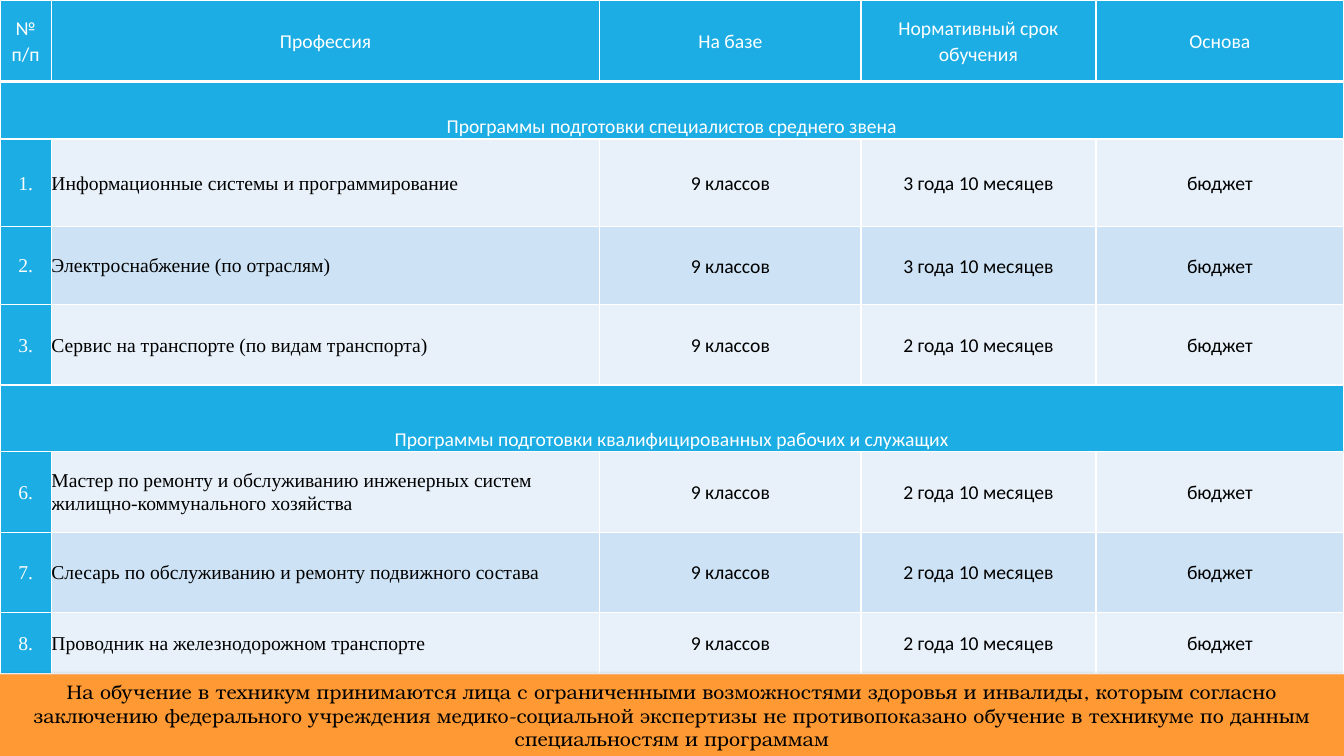
import dataclasses

import pptx
import pptx.dml.color
import pptx.enum.shapes
import pptx.enum.text
import pptx.oxml
import pptx.oxml.ns
import pptx.util

PX = 9144  # EMU in one px, 100 px to the inch
WIDE, HIGH = 1333, 750
HEX = {
    "blue": "1CADE4",
    "light": "E8F1FA",
    "mid": "CDE3F5",
    "orange": "FF9933",
    "white": "FFFFFF",
    "black": "000000",
}
SANS, SERIF, BOOK = "Calibri", "Times New Roman", "TeX Gyre Bonum"
SIZE = pptx.util.Pt(14)
ALIGN = pptx.enum.text.PP_ALIGN
ANCHOR = pptx.enum.text.MSO_ANCHOR


@dataclasses.dataclass(frozen=True)
class Look:
    fill: str
    ink: str
    font: str = SANS
    align: ALIGN = ALIGN.CENTER
    anchor: ANCHOR = ANCHOR.MIDDLE
    base: int = 1  # bottom border, pt


@dataclasses.dataclass(frozen=True)
class Row:
    high: int
    texts: tuple[str, ...]  # a single text spans the whole row
    band: str = "blue"


def course(high: int, num: str, name: str, term: str, band: str = "light") -> Row:
    return Row(high, (num, name, "9 классов", term, "бюджет"), band)


LONG, SHORT = "3 года 10 месяцев", "2 года 10 месяцев"
COLS = (51, 544, 259, 233, 246)
ROWS = (
    Row(81, ("№ п/п", "Профессия", "На базе", "Нормативный срок обучения", "Основа")),
    Row(57, ("Программы подготовки специалистов среднего звена",)),
    course(87, "1.", "Информационные системы и программирование", LONG),
    course(77, "2.", "Электроснабжение (по отраслям)", LONG, "mid"),
    course(80, "3.", "Сервис на транспорте (по видам транспорта)", SHORT),
    Row(66, ("Программы подготовки квалифицированных рабочих и служащих",)),
    course(80, "6.", "Мастер по ремонту и обслуживанию инженерных систем "
           "жилищно-коммунального хозяйства", SHORT),
    course(80, "7.", "Слесарь по обслуживанию и ремонту подвижного состава", SHORT, "mid"),
    course(60, "8.", "Проводник на железнодорожном транспорте", SHORT),
)
NOTE = (
    "На обучение в техникум принимаются лица с ограниченными возможностями здоровья "
    "и инвалиды, которым согласно заключению федерального учреждения медико-социальной "
    "экспертизы не противопоказано обучение в техникуме по данным специальностям и программам"
)
NOTE_TOP = 669


def rgb(name: str) -> pptx.dml.color.RGBColor:
    return pptx.dml.color.RGBColor.from_string(HEX[name])


def paint(shape, name: str) -> None:
    shape.fill.solid()
    shape.fill.fore_color.rgb = rgb(name)


def write(frame, text: str, font: str, ink: str, align: ALIGN):
    frame.text = text
    para = frame.paragraphs[0]
    para.alignment = align
    para.font.size = SIZE
    para.font.name = font
    para.font.color.rgb = rgb(ink)
    return para


def edge(cell, base: int) -> None:
    props = cell._tc.get_or_add_tcPr()
    for side, points in (("L", 1), ("R", 1), ("T", 1), ("B", base)):
        props.append(pptx.oxml.parse_xml(
            f'<a:ln{side} {pptx.oxml.ns.nsdecls("a")} w="{pptx.util.Pt(points)}">'
            f'<a:solidFill><a:srgbClr val="{HEX["white"]}"/></a:solidFill></a:ln{side}>'
        ))


def style(cell, look: Look) -> None:
    edge(cell, look.base)
    paint(cell, look.fill)
    cell.vertical_anchor = look.anchor
    cell.margin_left = cell.margin_right = cell.margin_top = cell.margin_bottom = 0


def choose(row: Row, col: int) -> Look:
    if len(row.texts) == 1:
        return Look("blue", "white", anchor=ANCHOR.BOTTOM)
    if row.band == "blue":
        return Look("blue", "white", base=3)
    if col == 0:
        return Look("blue", "white", SERIF)
    if col == 1:
        return Look(row.band, "black", SERIF, ALIGN.LEFT)
    return Look(row.band, "black")


def draw_table(slide) -> None:
    high = sum(row.high for row in ROWS)
    table = slide.shapes.add_table(len(ROWS), len(COLS), 0, 0, WIDE * PX, high * PX).table
    table.first_row = table.horz_banding = False
    for col, wide in enumerate(COLS):
        table.columns[col].width = wide * PX
    for num, row in enumerate(ROWS):
        table.rows[num].height = row.high * PX
        for col in range(len(COLS)):
            style(table.cell(num, col), choose(row, col))
        if len(row.texts) == 1:
            table.cell(num, 0).merge(table.cell(num, len(COLS) - 1))
        for col, text in enumerate(row.texts):
            look = choose(row, col)
            frame = table.cell(num, col).text_frame
            para = write(frame, text, look.font, look.ink, look.align)
            para.line_spacing = 1.07
            para.space_after = pptx.util.Pt(8)


def draw_note(slide) -> None:
    rect = pptx.enum.shapes.MSO_SHAPE.RECTANGLE
    note = slide.shapes.add_shape(
        rect, 0, NOTE_TOP * PX, WIDE * PX, (HIGH - NOTE_TOP) * PX
    )
    paint(note, "orange")
    note.line.fill.background()
    frame = note.text_frame
    frame.word_wrap = True
    frame.auto_size = pptx.enum.text.MSO_AUTO_SIZE.SHAPE_TO_FIT_TEXT
    write(frame, NOTE, BOOK, "black", ALIGN.CENTER)
    # Soft shadow below the band
    note.shadow.inherit = False
    glow = note._element.spPr.find(pptx.oxml.ns.qn("a:effectLst"))
    glow.append(pptx.oxml.parse_xml(
        f'<a:outerShdw {pptx.oxml.ns.nsdecls("a")} blurRad="{pptx.util.Pt(4.5)}" '
        f'dist="{pptx.util.Pt(1.5)}" dir="5400000" algn="ctr" rotWithShape="0">'
        f'<a:srgbClr val="{HEX["black"]}"><a:alpha val="63000"/></a:srgbClr></a:outerShdw>'
    ))


def main() -> None:
    deck = pptx.Presentation()
    deck.slide_width, deck.slide_height = WIDE * PX, HIGH * PX
    slide = deck.slides.add_slide(deck.slide_layouts.get_by_name("Blank"))
    # Table of courses, then the admission note
    draw_table(slide)
    draw_note(slide)
    deck.save("out.pptx")


if __name__ == "__main__":
    main()
